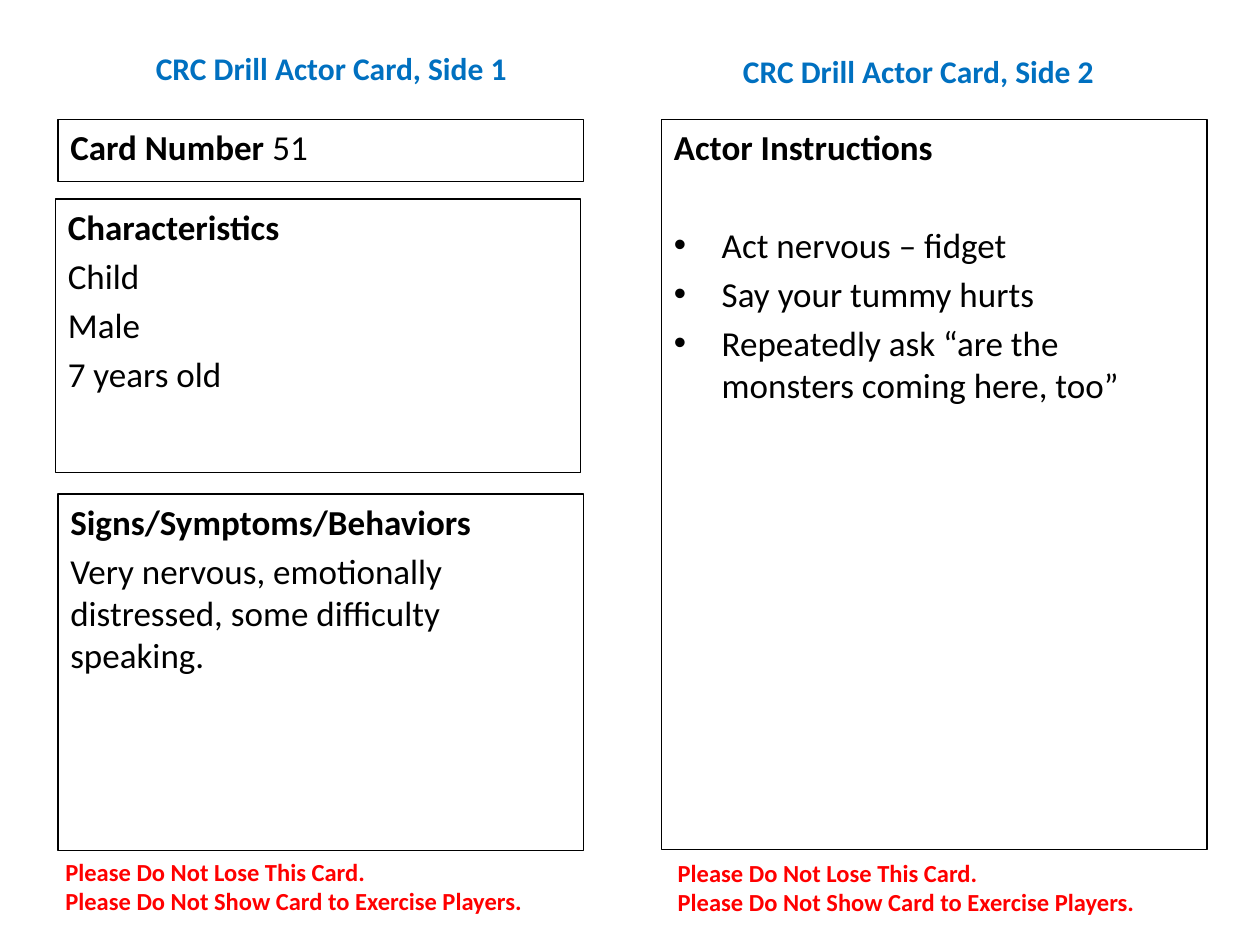
from lxml import etree
from pptx import Presentation
from pptx import util as u
from pptx.dml.color import RGBColor
from pptx.enum import shapes, text
from pptx.oxml.ns import qn

BLACK, BLUE, RED = "000000", "0070C0", "FF0000"
BODY = {"size": u.Pt(20), "name": "Calibri", "bold": False}
HEAD = {**BODY, "bold": True}
TITLE = {**HEAD, "size": u.Pt(18)}
NOTICE = {**HEAD, "size": u.Pt(14)}
WARNINGS = ["Please Do Not Lose This Card.",
            "Please Do Not Show Card to Exercise Players."]


def rgb(color):
    return RGBColor.from_string(color)


def inches(box):
    return [u.Inches(v) for v in box]


def add_run(p, words, fmt, color):
    r = p.add_run()
    r.text = words
    for name, value in fmt.items():
        setattr(r.font, name, value)
    r.font.color.rgb = rgb(color)


def next_paragraph(tf):
    """Return the first paragraph while it is empty, else a new one."""
    return tf.paragraphs[0] if not tf.paragraphs[0].runs else tf.add_paragraph()


def set_frame(tf, anchor):
    for name, value in {"word_wrap": True, "vertical_anchor": anchor,
                        "auto_size": text.MSO_AUTO_SIZE.NONE}.items():
        setattr(tf, name, value)


def set_bullet(p):
    pPr = p._p.get_or_add_pPr()
    pPr.set("marL", str(u.Inches(0.38)))
    pPr.set("indent", str(-u.Inches(0.38)))
    etree.SubElement(pPr, qn("a:buFont")).set("typeface", "Arial")
    etree.SubElement(pPr, qn("a:buChar")).set("char", "•")


def format_title(sp, box, words):
    sp.left, sp.top, sp.width, sp.height = inches(box)
    tf = sp.text_frame
    set_frame(tf, text.MSO_ANCHOR.MIDDLE)
    p = tf.paragraphs[0]
    p.alignment = text.PP_ALIGN.CENTER
    add_run(p, words, TITLE, BLUE)


def add_panel(s, box, heading, lines=(), value="", bullets=False):
    """Outlined box with a bold heading, an inline value and body lines."""
    sp = s.shapes.add_shape(shapes.MSO_SHAPE.RECTANGLE, *inches(box))
    sp.shadow.inherit = False
    sp.fill.background()
    sp.line.color.rgb = rgb(BLACK)
    sp.line.width = u.Pt(0.75)
    tf = sp.text_frame
    set_frame(tf, text.MSO_ANCHOR.TOP)

    for i, words in enumerate([heading, *lines]):
        p = next_paragraph(tf)
        p.alignment = text.PP_ALIGN.LEFT
        # A bulleted list starts one line below its heading
        p.space_before = u.Pt(32 if bullets and i == 1 else 4)
        add_run(p, words, BODY if i else HEAD, BLACK)
        if bullets and i:
            set_bullet(p)
    if value:
        add_run(tf.paragraphs[0], value, BODY, BLACK)


def add_notice(s, box):
    tf = s.shapes.add_textbox(*inches(box)).text_frame
    set_frame(tf, text.MSO_ANCHOR.TOP)
    for words in WARNINGS:
        add_run(next_paragraph(tf), words, NOTICE, RED)


def build_side_1(s, left):
    format_title(s.shapes.title, (left, 0.15, 4.42, 0.78),
                 "CRC Drill Actor Card, Side 1")
    add_panel(s, (left + 0.04, 0.95, 4.17, 0.49), "Card Number ", value="51")
    add_panel(s, (left + 0.02, 1.58, 4.17, 2.17), "Characteristics",
              ["Child", "Male", "7 years old"])
    add_panel(s, (left + 0.04, 3.92, 4.17, 2.83), "Signs/Symptoms/Behaviors",
              ["Very nervous, emotionally distressed, some difficulty speaking."])
    add_notice(s, (left, 6.75, 4.21, 0.57))


def build_side_2(s, left):
    box = (left, 0.17, 4.42, 0.78)
    format_title(s.shapes.add_textbox(*inches(box)), box,
                 "CRC Drill Actor Card, Side 2")
    add_panel(s, (left + 0.17, 0.95, 4.33, 5.79), "Actor Instructions",
              ["Act nervous – fidget", "Say your tummy hurts",
               "Repeatedly ask “are the monsters coming here, too”"],
              bullets=True)
    add_notice(s, (left + 0.2, 6.76, 4.21, 0.57))


def main():
    prs = Presentation()
    prs.slide_width, prs.slide_height = u.Inches(10), u.Inches(7.5)
    s = prs.slides.add_slide(prs.slide_layouts.get_by_name("Title Only"))
    build_side_1(s, 0.42)
    build_side_2(s, 5.08)
    prs.save("out.pptx")


if __name__ == "__main__":
    main()
